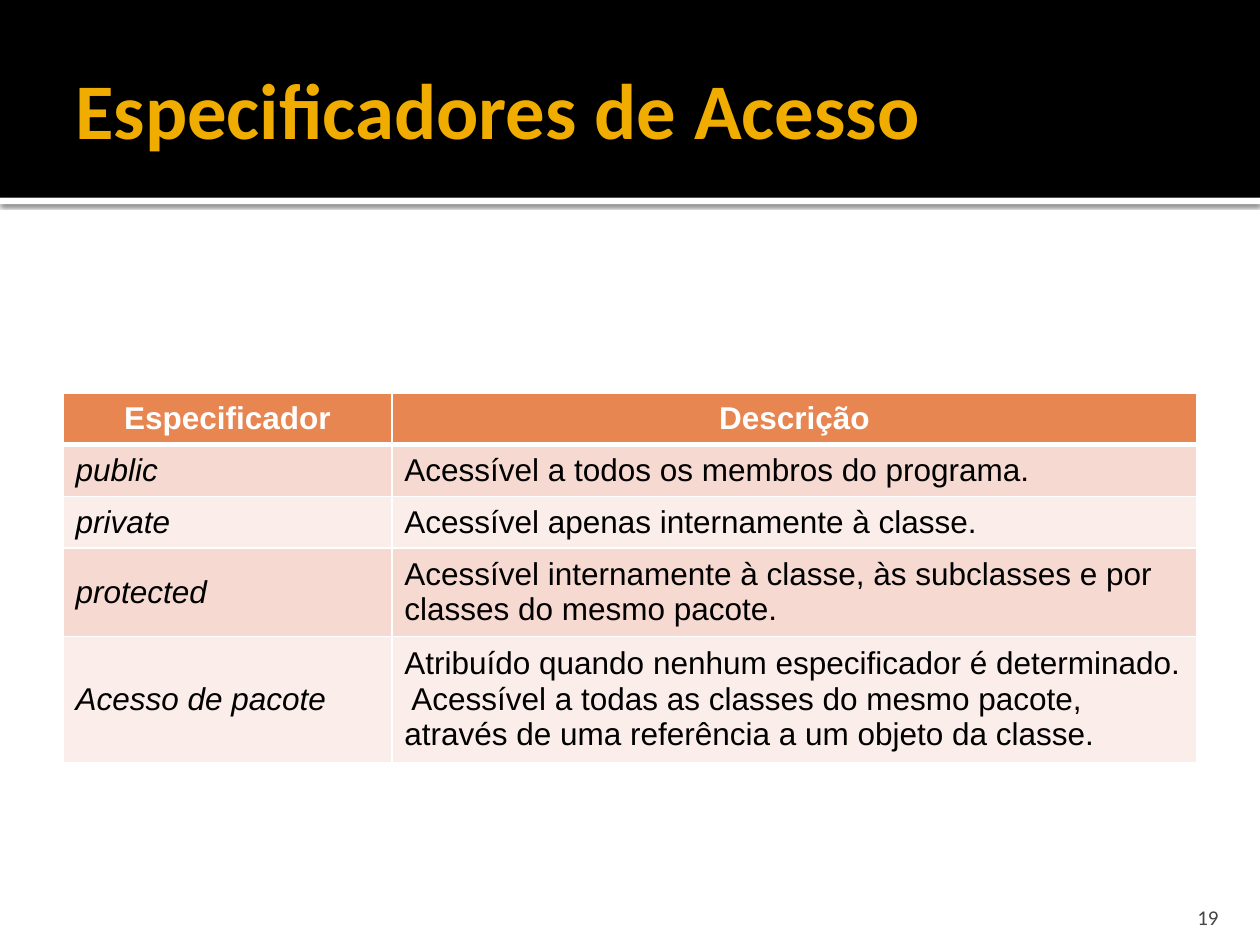
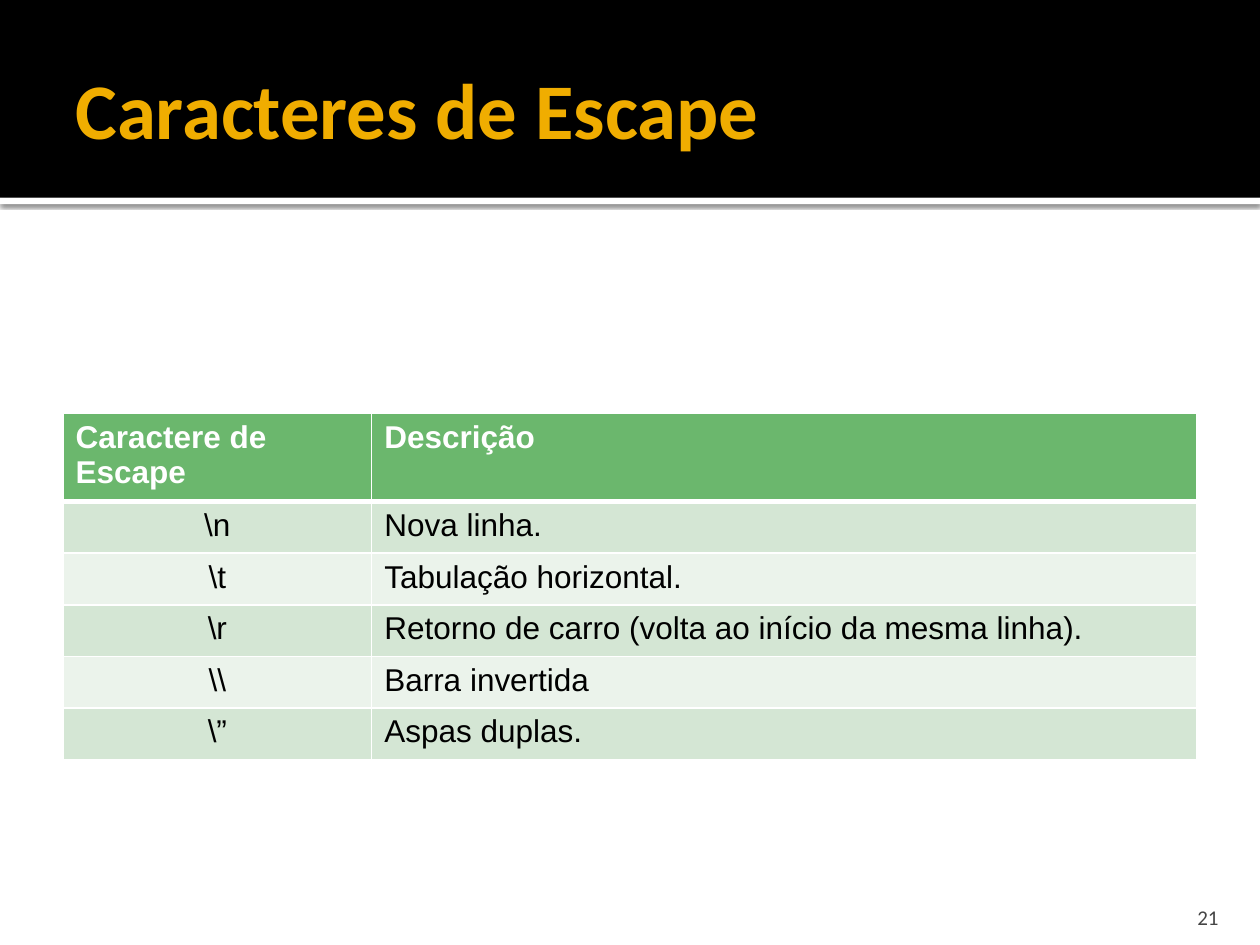
"""Builds two slides with reference tables on Java access specifiers and escape characters."""
from lxml.etree import SubElement
from pptx import Presentation
from pptx.dml.color import RGBColor
from pptx.enum.shapes import MSO_SHAPE
from pptx.enum.text import MSO_ANCHOR, PP_ALIGN
from pptx.oxml.ns import qn
from pptx.util import Inches, Pt

LEFT, CENTER, RIGHT = PP_ALIGN.LEFT, PP_ALIGN.CENTER, PP_ALIGN.RIGHT
TOP, MIDDLE, BOTTOM = MSO_ANCHOR.TOP, MSO_ANCHOR.MIDDLE, MSO_ANCHOR.BOTTOM
WIDTH, HEIGHT = 10, 7.5
MARGIN, BAND, STRIP = 0.5, 1.57, 0.05
ROW, LINE, PADDING = 0.41, 0.28, 0.1
WHITE, BLACK, GOLD, GRAY = "FFFFFF", "000000", "F0AD00", "454545"

TOPICS = [
    dict(
        title="Especificadores de Acesso", number="19", top=3.12, columns=(2.61, 6.39),
        accent="E88651", stripes=("F6D9D0", "FBEDE9"),
        anchor=MIDDLE, header_align=CENTER, key_align=LEFT, key_italic=True,
        header=("Especificador", "Descrição"), lines=(1, 1, 1, 2, 3),
        entries=[
            ("public", "Acessível a todos os membros do programa."),
            ("private", "Acessível apenas internamente à classe."),
            ("protected", "Acessível internamente à classe, às subclasses e por "
                          "classes do mesmo pacote."),
            ("Acesso de pacote", "Atribuído quando nenhum especificador é determinado.  "
                                 "Acessível a todas as classes do mesmo pacote, "
                                 "através de uma referência a um objeto da classe."),
        ],
    ),
    dict(
        title="Caracteres de Escape", number="21", top=3.28, columns=(2.45, 6.55),
        accent="6BB76D", stripes=("D4E6D4", "EBF3EB"),
        anchor=TOP, header_align=LEFT, key_align=CENTER, key_italic=False,
        header=("Caractere de Escape", "Descrição"), lines=(2, 1, 1, 1, 1, 1),
        entries=[
            (r"\n", "Nova linha."),
            (r"\t", "Tabulação horizontal."),
            (r"\r", "Retorno de carro (volta ao início da mesma linha)."),
            (r"\\", "Barra invertida"),
            (r"\”", "Aspas duplas."),
        ],
    ),
]


def paint(fill, color):
    fill.solid()
    fill.fore_color.rgb = RGBColor.from_string(color)


def write(frame, text, size=18, font="Arial", color=BLACK, bold=False, italic=False,
          align=LEFT):
    paragraph = frame.paragraphs[0]
    paragraph.alignment = align
    run = paragraph.add_run()
    run.text = text
    run.font.size, run.font.name = Pt(size), font
    run.font.bold, run.font.italic = bold, italic
    run.font.color.rgb = RGBColor.from_string(color)


def add_label(slide, text, box, insets, anchor, **style):
    frame = slide.shapes.add_textbox(*map(Inches, box)).text_frame
    frame.word_wrap = True
    frame.vertical_anchor = anchor
    (frame.margin_left, frame.margin_top,
     frame.margin_right, frame.margin_bottom) = map(Inches, insets)
    write(frame, text, font="Calibri", **style)


def add_band(slide, top, height, color):
    band = slide.shapes.add_shape(MSO_SHAPE.RECTANGLE, 0, Inches(top),
                                  Inches(WIDTH), Inches(height))
    band.shadow.inherit = False
    paint(band.fill, color)
    band.line.fill.background()
    return band


def cast_shadow(band):
    effects = band._element.spPr.find(qn("a:effectLst"))
    shadow = SubElement(effects, qn("a:outerShdw"), blurRad=str(Pt(2.5)),
                        dist=str(Pt(0.8)), dir="5400000", algn="t", rotWithShape="0")
    color = SubElement(shadow, qn("a:srgbClr"), val=BLACK)
    SubElement(color, qn("a:alpha"), val="60000")


def set_borders(cell, row):
    weights = dict(lnL=1, lnR=1, lnT=3 if row == 1 else 1, lnB=3 if row == 0 else 1)
    for side, weight in weights.items():
        line = SubElement(cell._tc.get_or_add_tcPr(), qn(f"a:{side}"), w=str(Pt(weight)))
        SubElement(SubElement(line, qn("a:solidFill")), qn("a:srgbClr"), val=WHITE)


def add_reference(slide, topic):
    rows = [topic["header"], *topic["entries"]]
    heights = [max(ROW, PADDING + LINE * count) for count in topic["lines"]]
    table = slide.shapes.add_table(
        len(rows), len(topic["columns"]), Inches(MARGIN), Inches(topic["top"]),
        Inches(sum(topic["columns"])), Inches(sum(heights))).table
    for column, width in zip(table.columns, topic["columns"]):
        column.width = Inches(width)
    for row, (texts, height) in enumerate(zip(rows, heights)):
        table.rows[row].height = Inches(height)
        for column, text in enumerate(texts):
            cell = table.cell(row, column)
            cell.vertical_anchor = topic["anchor"]
            set_borders(cell, row)
            if row == 0:
                paint(cell.fill, topic["accent"])
                style = dict(color=WHITE, bold=True, align=topic["header_align"])
            else:
                paint(cell.fill, topic["stripes"][(row - 1) % 2])
                style = {}
                if column == 0:
                    style = dict(italic=topic["key_italic"], align=topic["key_align"])
            write(cell.text_frame, text, **style)


def add_topic(deck, topic):
    slide = deck.slides.add_slide(deck.slide_layouts[6])
    paint(slide.background.fill, WHITE)
    cast_shadow(add_band(slide, BAND, STRIP, WHITE))
    add_band(slide, 0, BAND, BLACK)
    add_label(slide, topic["title"], (MARGIN, 0.17, 8.63, 1.37), (0.1, 0.05, 0.05, 0.05),
              MIDDLE, size=45, color=GOLD, bold=True)
    add_reference(slide, topic)
    add_label(slide, topic["number"], (8.97, 7.08, 0.8, 0.3), (0.1, 0.05, 0.1, 0),
              BOTTOM, size=12, color=GRAY, align=RIGHT)


def main():
    deck = Presentation()
    deck.slide_width, deck.slide_height = Inches(WIDTH), Inches(HEIGHT)
    for topic in TOPICS:
        add_topic(deck, topic)
    deck.save("out.pptx")


if __name__ == "__main__":
    main()
